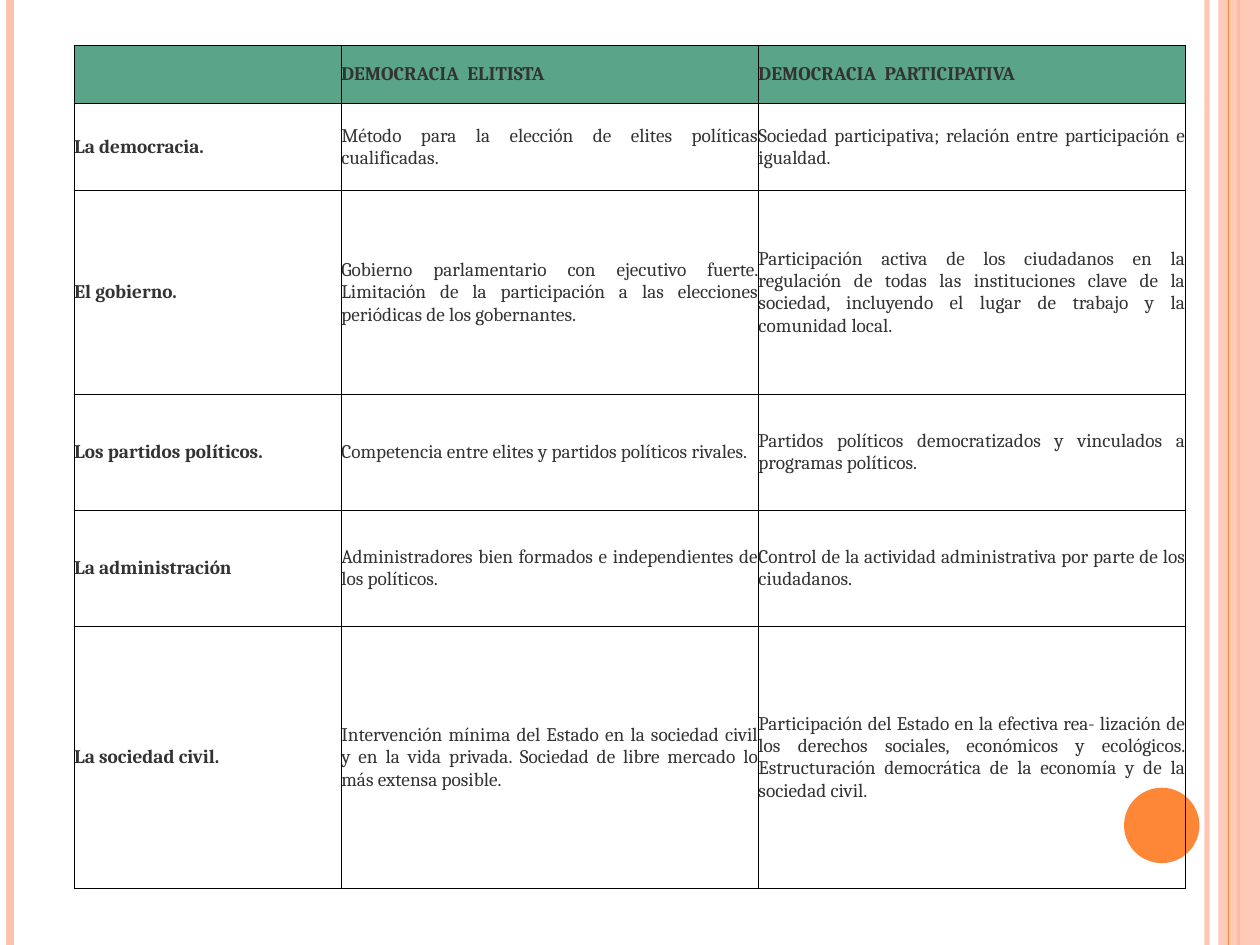
from dataclasses import dataclass

from lxml.etree import SubElement
from pptx import Presentation
from pptx.dml.color import RGBColor
from pptx.enum.shapes import MSO_CONNECTOR as Link, MSO_SHAPE as Shape
from pptx.enum.text import MSO_ANCHOR as Anchor, PP_ALIGN as Align
from pptx.oxml.ns import qn
from pptx.util import Cm, Pt


@dataclass(frozen=True)
class Theme:
    orange: str = "FE8637"
    peach: str = "FEC3AE"
    header: str = "5AA58A"
    text: str = "333333"
    border: str = "000000"
    font: str = "Cambria"
    size: float = 11
    border_width: float = 1


@dataclass(frozen=True)
class Stripe:
    x: float
    width: float
    color: str
    opacity: int = 100


@dataclass(frozen=True)
class Block:
    kind: Shape
    x: float
    y: float
    w: float
    h: float
    color: str
    opacity: int = 100


@dataclass(frozen=True)
class Row:
    height: float
    topic: str
    elitist: str
    participatory: str


THEME = Theme()
WIDTH, HEIGHT = 25.4, 19.05
TABLE_LEFT, TABLE_TOP = 1.5, 0.92
COLUMNS = [5.38, 8.41, 8.61]

DECOR = [
    Stripe(24.33, 3, THEME.peach, 93),
    Stripe(0.2, 4.5, THEME.peach),
    Stripe(24.97, 1.5, THEME.orange),
    Block(Shape.RECTANGLE, 24.56, 0, 0.84, HEIGHT, THEME.peach, 87),
    Stripe(24.77, 0.75, THEME.orange),
    Block(Shape.OVAL, 22.66, 15.88, 1.52, 1.52, THEME.orange),
]

ROWS = [
    Row(1.17, "", "DEMOCRACIA  ELITISTA", "DEMOCRACIA  PARTICIPATIVA"),
    Row(1.75, "La democracia.",
        "Método para la elección de elites políticas cualificadas.",
        "Sociedad participativa; relación entre participación e igualdad."),
    Row(4.11, "El gobierno.",
        "Gobierno parlamentario con ejecutivo fuerte. Limitación de la "
        "participación a las elecciones periódicas de los gobernantes.",
        "Participación activa de los ciudadanos en la regulación de todas las "
        "instituciones clave de la sociedad, incluyendo el lugar de trabajo y "
        "la comunidad local."),
    Row(2.34, "Los partidos políticos.",
        "Competencia entre elites y partidos políticos rivales.",
        "Partidos políticos democratizados y vinculados a programas políticos."),
    Row(2.34, "La administración",
        "Administradores bien formados e independientes de los políticos.",
        "Control de la actividad administrativa por parte de los ciudadanos."),
    Row(5.28, "La sociedad civil.",
        "Intervención mínima del Estado en la sociedad civil y en la vida "
        "privada. Sociedad de libre mercado lo más extensa posible.",
        "Participación del Estado en la efectiva rea- lización de los derechos "
        "sociales, económicos y ecológicos. Estructuración democrática de la "
        "economía y de la sociedad civil."),
]


def rgb(color: str) -> RGBColor:
    return RGBColor.from_string(color)


def set_opacity(element, opacity: int) -> None:
    if opacity < 100:
        clr = next(element.iter(qn("a:srgbClr")))
        SubElement(clr, qn("a:alpha"), val=str(opacity * 1000))


def draw_stripe(s, stripe: Stripe) -> None:
    x = Cm(stripe.x)
    line = s.shapes.add_connector(Link.STRAIGHT, x, 0, x, Cm(HEIGHT))
    line.line.color.rgb = rgb(stripe.color)
    line.line.width = Pt(stripe.width)
    sp_pr = line._element.spPr
    set_opacity(sp_pr, stripe.opacity)
    SubElement(sp_pr, qn("a:effectLst"))


def draw_block(s, block: Block) -> None:
    sp = s.shapes.add_shape(block.kind, Cm(block.x), Cm(block.y),
                            Cm(block.w), Cm(block.h))
    sp.shadow.inherit = False
    sp.fill.solid()
    sp.fill.fore_color.rgb = rgb(block.color)
    sp.line.fill.background()
    set_opacity(sp._element.spPr, block.opacity)


def set_borders(cell) -> None:
    tc_pr = cell._tc.get_or_add_tcPr()
    for i, side in enumerate(("lnL", "lnR", "lnT", "lnB")):
        ln = tc_pr.makeelement(qn(f"a:{side}"), w=str(Pt(THEME.border_width)))
        fill = SubElement(ln, qn("a:solidFill"))
        SubElement(fill, qn("a:srgbClr"), val=THEME.border)
        tc_pr.insert(i, ln)


def fill_cell(cell, text: str, header: bool, bold: bool) -> None:
    cell.margin_left = cell.margin_right = 0
    cell.margin_top = cell.margin_bottom = 0
    cell.vertical_anchor = Anchor.MIDDLE
    if header:
        cell.fill.solid()
        cell.fill.fore_color.rgb = rgb(THEME.header)
    else:
        cell.fill.background()
    set_borders(cell)
    if not text:
        return
    cell.text_frame.text = text
    p = cell.text_frame.paragraphs[0]
    p.alignment = Align.JUSTIFY
    font = p.runs[0].font
    font.name = THEME.font
    font.size = Pt(THEME.size)
    font.bold = bold
    font.color.rgb = rgb(THEME.text)


def draw_table(s, rows: list[Row]) -> None:
    table = s.shapes.add_table(
        len(rows), len(COLUMNS), Cm(TABLE_LEFT), Cm(TABLE_TOP),
        Cm(sum(COLUMNS)), Cm(sum(row.height for row in rows))).table
    for column, width in zip(table.columns, COLUMNS):
        column.width = Cm(width)
    for i, row in enumerate(rows):
        table.rows[i].height = Cm(row.height)
        for j, text in enumerate((row.topic, row.elitist, row.participatory)):
            fill_cell(table.cell(i, j), text, i == 0, i == 0 or j == 0)


def main() -> None:
    prs = Presentation()
    prs.slide_width, prs.slide_height = Cm(WIDTH), Cm(HEIGHT)
    s = prs.slides.add_slide(prs.slide_layouts[6])
    for item in DECOR:
        if isinstance(item, Stripe):
            draw_stripe(s, item)
        else:
            draw_block(s, item)
    draw_table(s, ROWS)
    prs.save("out.pptx")


if __name__ == "__main__":
    main()
